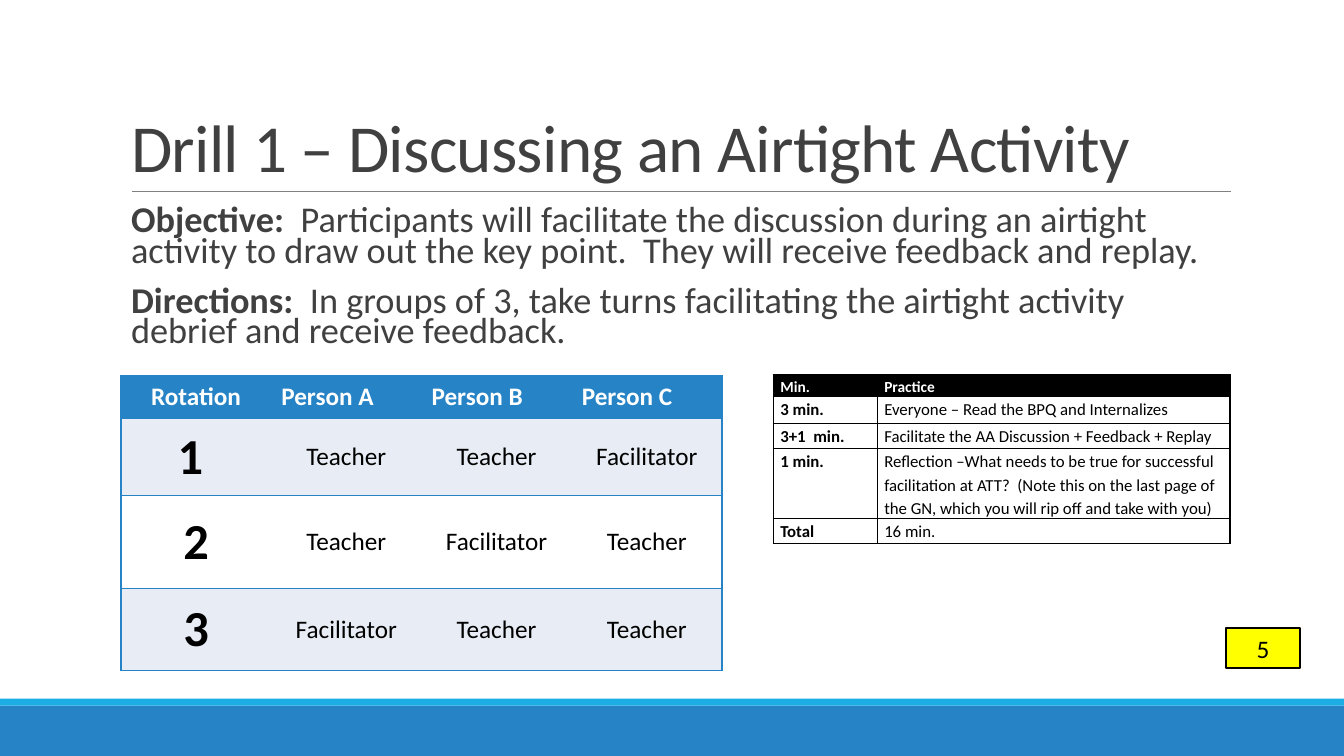
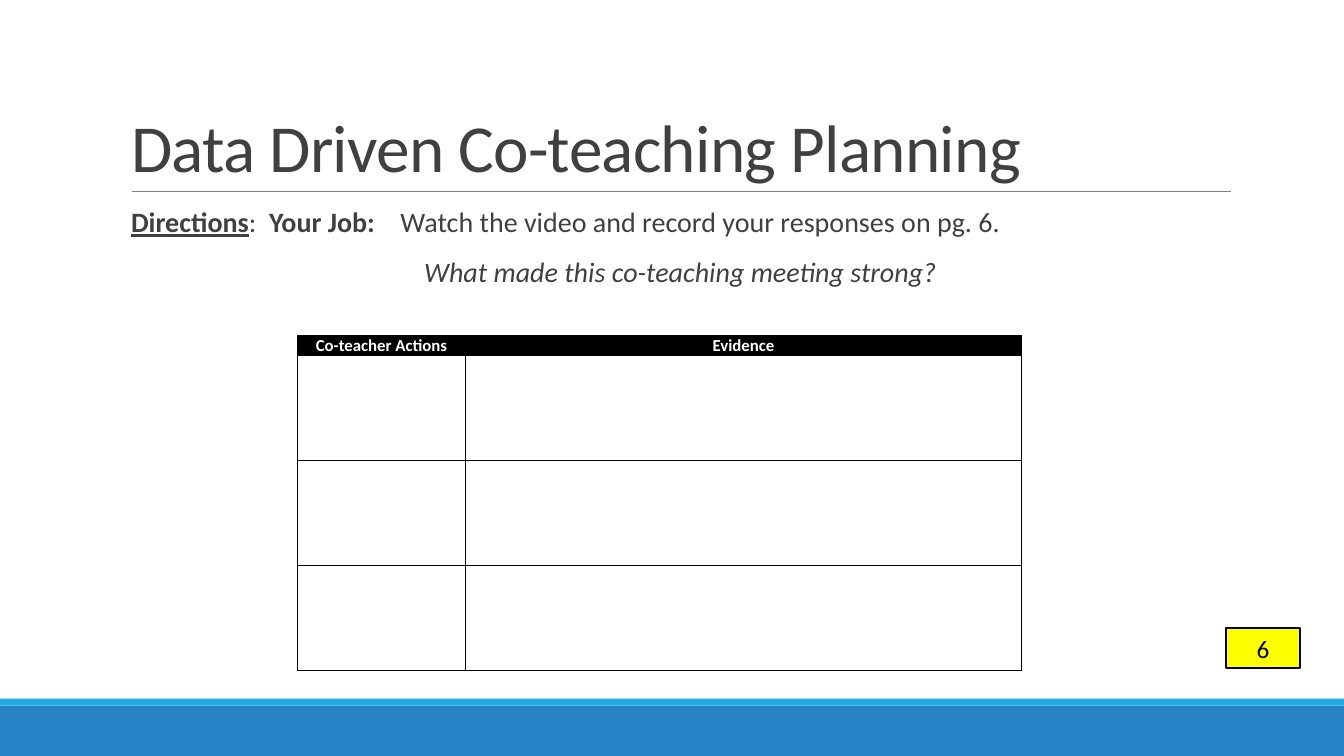
from lxml import etree
from pptx import Presentation
from pptx import util as u
from pptx.dml.color import RGBColor
from pptx.enum import shapes, text
from pptx.oxml import ns

BLUE = RGBColor(0x26, 0x83, 0xC6)
CYAN = RGBColor(0x1C, 0xAD, 0xE4)
PALE = RGBColor(0xE8, 0xED, 0xF5)
GRAY = RGBColor(0x80, 0x80, 0x80)
DARK = RGBColor(0x40, 0x40, 0x40)
YELLOW = RGBColor(0xFF, 0xFF, 0x00)
BLACK = RGBColor(0, 0, 0)
WHITE = RGBColor(0xFF, 0xFF, 0xFF)

FONT = "Calibri"
WIDE, HIGH = u.Inches(13.33), u.Inches(7.5)
LEFT, SPAN = 9, 82.5
MID = text.PP_ALIGN.CENTER
START = text.PP_ALIGN.LEFT


def col(n):
    return round(WIDE * n / 100)


def row(n):
    return round(HIGH * n / 100)


def area(x, y, w, h):
    return col(x), row(y), col(w), row(h)


def write(para, runs, size, color, align=START, lead=None):
    para.alignment = align
    if lead:
        para.line_spacing = lead
    for words, marks in runs:
        run = para.add_run()
        run.text = words
        font = run.font
        font.name, font.size = FONT, u.Pt(size)
        font.color.rgb = color
        font.bold = "b" in marks
        font.italic = "i" in marks
        font.underline = "u" in marks


def block(slide, place, fill, edge=None):
    shape = slide.shapes.add_shape(shapes.MSO_SHAPE.RECTANGLE, *area(*place))
    shape.shadow.inherit = False
    shape.fill.solid()
    shape.fill.fore_color.rgb = fill
    if edge is None:
        shape.line.fill.background()
    else:
        shape.line.color.rgb = edge
        shape.line.width = u.Pt(1.25)
    return shape


def rule(slide, start, end, y):
    line = slide.shapes.add_connector(
        shapes.MSO_CONNECTOR.STRAIGHT, col(start), row(y), col(end), row(y))
    line.line.color.rgb = GRAY
    line.line.width = u.Pt(0.5)
    etree.SubElement(line.element.spPr, ns.qn("a:effectLst"))


def head(slide, words):
    title = slide.shapes.title
    title.left, title.top, title.width, title.height = area(LEFT, 4.13, SPAN, 21.2)
    frame = title.text_frame
    frame.auto_size = text.MSO_AUTO_SIZE.NONE
    frame.vertical_anchor = text.MSO_ANCHOR.BOTTOM
    para = frame.paragraphs[0]
    write(para, [(words, "")], 48, DARK, lead=0.85)
    para.runs[0].font._element.set("spc", "-50")


def frame(deck, words, page):
    slide = deck.slides.add_slide(deck.slide_layouts.get_by_name("Title Only"))
    block(slide, (0, 93.33, 100, 6.67), BLUE)
    block(slide, (0, 92.4, 100, 0.93), CYAN)
    rule(slide, 9.83, 91.6, 25.33)
    head(slide, words)
    badge = block(slide, (91.2, 83.07, 5.55, 5.33), YELLOW, BLACK)
    badge.text_frame.vertical_anchor = text.MSO_ANCHOR.MIDDLE
    write(badge.text_frame.paragraphs[0], [(page, "")], 18, BLACK, MID)
    return slide


def body(slide, paras, size, lead):
    box = slide.shapes.add_textbox(*area(LEFT, 26.93, SPAN, 21.2)).text_frame
    box.word_wrap = True
    box.margin_left = box.margin_right = 0
    for i, (runs, align) in enumerate(paras):
        para = box.add_paragraph() if i else box.paragraphs[0]
        write(para, runs, size, DARK, align, lead)
        para.space_before, para.space_after = u.Pt(12), u.Pt(2)
        props = para._p.get_or_add_pPr()
        props.set("marL", str(u.Inches(0.1)))
        props.set("indent", "0")


def border(cell, sides, color):
    props = cell._tc.get_or_add_tcPr()
    for i, side in enumerate("LRTB"):
        line = etree.Element(ns.qn("a:ln" + side), w=str(u.Pt(1)))
        if side in sides:
            fill = etree.SubElement(line, ns.qn("a:solidFill"))
            etree.SubElement(fill, ns.qn("a:srgbClr"), val=str(color))
        else:
            etree.SubElement(line, ns.qn("a:noFill"))
        props.insert(i, line)


def grid(slide, x, y, wide, high, tint, edge):
    place = area(x, y, sum(wide), sum(high))
    table = slide.shapes.add_table(len(high), len(wide), *place).table
    table.horz_banding = False
    for part, n in zip(table.columns, wide):
        part.width = col(n)
    for part, n in zip(table.rows, high):
        part.height = row(n)
    for r in range(len(high)):
        for c in range(len(wide)):
            cell = table.cell(r, c)
            cell.fill.solid()
            cell.fill.fore_color.rgb = tint(r)
            border(cell, edge(c), BLACK if tint(0) == BLACK else BLUE)
    return table


def ink(r):
    return BLACK if r == 0 else WHITE


def tight(cell):
    cell.margin_left = cell.margin_right = u.Inches(0.07)
    cell.margin_top = cell.margin_bottom = 0


def turns(slide):
    data = [
        ["Rotation", "Person A", "Person B", "Person C"],
        ["1 ", "Teacher", "Teacher", "Facilitator"],
        ["2", "Teacher", "Facilitator", "Teacher"],
        ["3", "Facilitator", "Teacher", "Teacher"],
    ]
    table = grid(slide, LEFT, 49.73, [11.18] * 4, [5.6, 10.27, 12.27, 10.8],
                 lambda r: BLUE if r == 0 else PALE if r % 2 else WHITE,
                 lambda c: "TB" + {0: "L", 3: "R"}.get(c, ""))
    for r, line in enumerate(data):
        for c, words in enumerate(line):
            cell = table.cell(r, c)
            if r:
                cell.vertical_anchor = text.MSO_ANCHOR.MIDDLE
            write(cell.text_frame.paragraphs[0],
                  [(words, "b" if r == 0 or c == 0 else "")],
                  36 if r and c == 0 else 18,
                  BLACK if r else WHITE,
                  MID if r or c == 0 else START)


def times(slide):
    data = [
        ["Min.", "Practice"],
        ["3 min.", "Everyone – Read the BPQ and Internalizes"],
        ["3+1  min.", "Facilitate the AA Discussion + Feedback + Replay"],
        ["1 min.", "Reflection –What needs to be true for successful "
                   "facilitation at ATT?  (Note this on the last page of "
                   "the GN, which you will rip off and take with you)"],
        ["Total", "16 min."],
    ]
    table = grid(slide, 57.54, 49.6, [7.73, 26.25],
                 [2.67, 3.6, 3.33, 9.2, 3.33], ink, lambda c: "LRTB")
    for r, line in enumerate(data):
        for c, words in enumerate(line):
            cell = table.cell(r, c)
            tight(cell)
            write(cell.text_frame.paragraphs[0],
                  [(words, "b" if r == 0 or c == 0 else "")],
                  12 if r else 11, BLACK if r else WHITE, lead=1.15)


def proof(slide):
    table = grid(slide, 22.13, 44.4, [12.53, 41.33],
                 [2.67] + [13.87] * 3, ink, lambda c: "LRTB")
    for c, words in enumerate(["Co-teacher Actions", "Evidence"]):
        cell = table.cell(0, c)
        tight(cell)
        write(cell.text_frame.paragraphs[0], [(words, "b")], 12, WHITE, MID)


def drill(deck):
    slide = frame(deck, "Drill 1 – Discussing an Airtight Activity", "5")
    body(slide, [
        ([("Objective:", "b"),
          ("  Participants will facilitate the discussion during an airtight "
           "activity to draw out the key point.  They will receive feedback "
           "and replay.", "")], START),
        ([("Directions:  ", "b"),
          ("In groups of 3, take turns facilitating the airtight activity "
           "debrief and receive feedback.", "")], START),
    ], 25.9, 0.7)
    turns(slide)
    times(slide)


def plan(deck):
    slide = frame(deck, "Data Driven Co-teaching Planning", "6")
    body(slide, [
        ([("Directions", "bu"), (":  ", ""), ("Your Job:    ", "b"),
          ("Watch the video and record your responses on pg. 6.", "")], START),
        ([("What made this co-teaching meeting strong?", "i")], MID),
    ], 20, 0.9)
    proof(slide)


def main():
    deck = Presentation()
    deck.slide_width, deck.slide_height = WIDE, HIGH
    drill(deck)
    plan(deck)
    deck.save("out.pptx")


if __name__ == "__main__":
    main()
